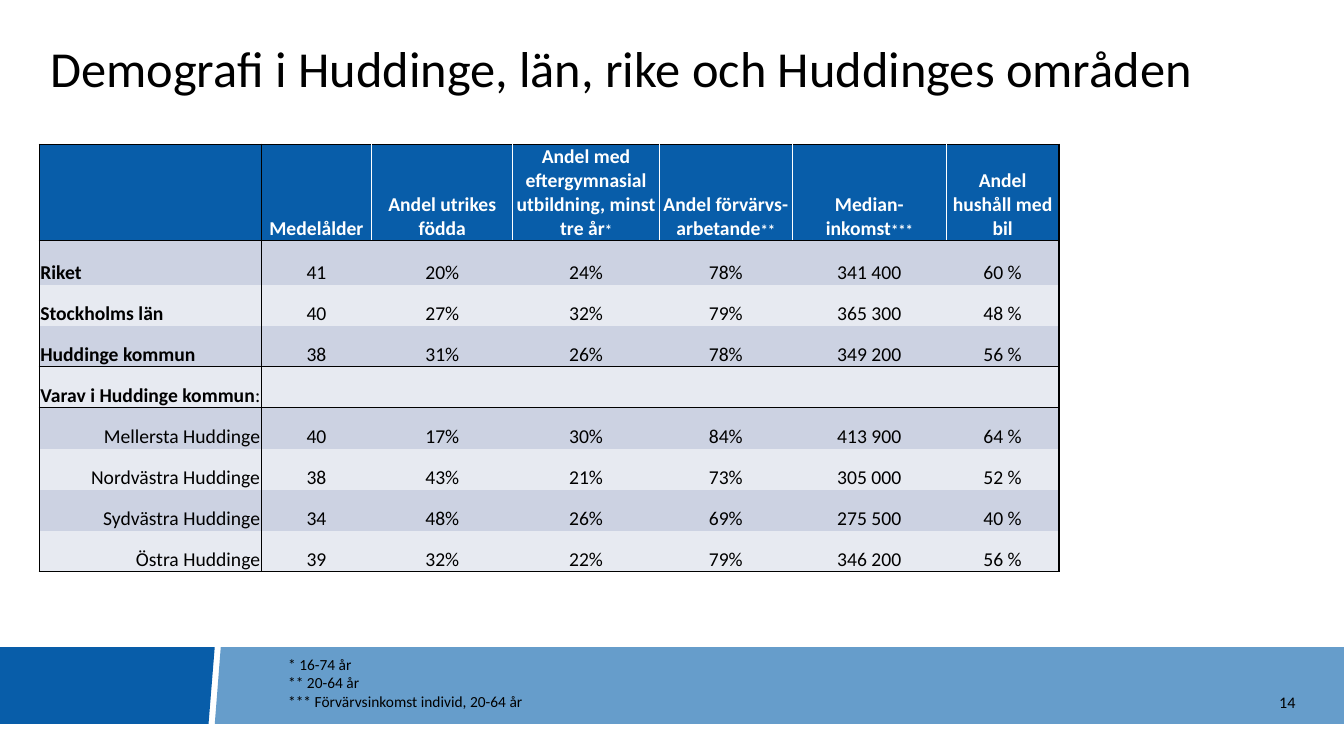
from lxml import etree
from pptx import Presentation
from pptx.dml.color import RGBColor
from pptx.enum.text import MSO_ANCHOR, PP_ALIGN
from pptx.oxml.ns import qn
from pptx.util import Pt

LEFT, CENTER, RIGHT = PP_ALIGN.LEFT, PP_ALIGN.CENTER, PP_ALIGN.RIGHT
TOP, MIDDLE, BOTTOM = MSO_ANCHOR.TOP, MSO_ANCHOR.MIDDLE, MSO_ANCHOR.BOTTOM

BLACK = RGBColor(0x00, 0x00, 0x00)
WHITE = RGBColor(0xFF, 0xFF, 0xFF)
DARK_BLUE = RGBColor(0x08, 0x5D, 0xA9)
LIGHT_BLUE = RGBColor(0x66, 0x9D, 0xCB)
BAND_DARK = RGBColor(0xCC, 0xD2, 0xE2)
BAND_LIGHT = RGBColor(0xE7, 0xEA, 0xF1)
FONT = "Calibri"

TITLE = "Demografi i Huddinge, län, rike och Huddinges områden"
# Each heading is its text and its footnote mark.
HEADINGS = [
    ("", ""),
    ("Medelålder", ""),
    ("Andel utrikes födda", ""),
    ("Andel med eftergymnasial utbildning, minst tre år", "*"),
    ("Andel förvärvs-arbetande", "**"),
    ("Median-inkomst", "***"),
    ("Andel hushåll med bil", ""),
]
ROWS = [
    ("Riket", "41", "20%", "24%", "78%", "341 400", "60 %"),
    ("Stockholms län", "40", "27%", "32%", "79%", "365 300", "48 %"),
    ("Huddinge kommun", "38", "31%", "26%", "78%", "349 200", "56 %"),
    ("Varav i Huddinge kommun", "", "", "", "", "", ""),
    ("Mellersta Huddinge", "40", "17%", "30%", "84%", "413 900", "64 %"),
    ("Nordvästra Huddinge", "38", "43%", "21%", "73%", "305 000", "52 %"),
    ("Sydvästra Huddinge", "34", "48%", "26%", "69%", "275 500", "40 %"),
    ("Östra Huddinge", "39", "32%", "22%", "79%", "346 200", "56 %"),
]
SUBHEADING_ROW = 4
FOOTNOTES = ["* 16-74 år", "** 20-64 år", "*** Förvärvsinkomst individ, 20-64 år"]
PAGE_NUMBER = "14"

COLUMN_WIDTHS = [158.5, 79, 100.8, 104.6, 95, 110, 80.5]
ROW_HEIGHTS = [68.2, 31.5] + [29.3] * 7
BLACK_RULES_ACROSS = {0, 1, 4, 5, 9}  # counted in row edges
BLACK_RULES_DOWN = {0, 1, 7}  # counted in column edges

BAND_TOP, BAND_BOTTOM = 462.2, 517
BANDS = [
    (LIGHT_BLUE, [(157.7, BAND_TOP), (960, BAND_TOP), (960, BAND_BOTTOM), (153.4, BAND_BOTTOM)]),
    (DARK_BLUE, [(0, BAND_TOP), (153.4, BAND_TOP), (149, BAND_BOTTOM), (0, BAND_BOTTOM)]),
]


def style(paragraph, size, color=BLACK, bold=False, alignment=LEFT):
    paragraph.alignment = alignment
    paragraph.font.name = FONT
    paragraph.font.size = Pt(size)
    paragraph.font.color.rgb = color
    paragraph.font.bold = bold


def add_band(slide, color, points):
    builder = slide.shapes.build_freeform(Pt(points[0][0]), Pt(points[0][1]))
    builder.add_line_segments([(Pt(x), Pt(y)) for x, y in points[1:]], close=True)
    band = builder.convert_to_shape()
    band.shadow.inherit = False
    band.fill.solid()
    band.fill.fore_color.rgb = color
    band.line.fill.background()


def add_text(slide, box, lines, size, alignment=LEFT, anchor=TOP):
    frame = slide.shapes.add_textbox(*[Pt(value) for value in box]).text_frame
    frame.word_wrap = True
    frame.vertical_anchor = anchor
    for index, line in enumerate(lines):
        paragraph = frame.add_paragraph() if index else frame.paragraphs[0]
        paragraph.text = line
        style(paragraph, size, alignment=alignment)


def set_borders(cell, row, column):
    def across(edge):
        return BLACK if edge in BLACK_RULES_ACROSS else None

    def down(edge):
        if edge in BLACK_RULES_DOWN:
            return BLACK
        return WHITE if row == 0 else None

    borders = [("a:lnL", down(column)), ("a:lnR", down(column + 1)),
               ("a:lnT", across(row)), ("a:lnB", across(row + 1))]
    properties = cell._tc.get_or_add_tcPr()
    for position, (tag, color) in enumerate(borders):
        line = etree.Element(qn(tag), w=str(Pt(1)))
        properties.insert(position, line)
        if color is None:
            etree.SubElement(line, qn("a:noFill"))
        else:
            fill = etree.SubElement(line, qn("a:solidFill"))
            etree.SubElement(fill, qn("a:srgbClr"), val=str(color))


def format_cell(cell, row, column):
    cell.margin_left = cell.margin_right = cell.margin_top = Pt(0.7)
    cell.margin_bottom = 0
    cell.vertical_anchor = BOTTOM
    cell.fill.solid()
    if row == 0:
        cell.fill.fore_color.rgb = DARK_BLUE
    else:
        cell.fill.fore_color.rgb = BAND_DARK if row % 2 else BAND_LIGHT
    set_borders(cell, row, column)


def fill_cell(cell, row, column):
    paragraph = cell.text_frame.paragraphs[0]
    if row == 0:
        text, mark = HEADINGS[column]
        paragraph.text = text
        style(paragraph, 14, WHITE, True, CENTER)
        if mark:
            run = paragraph.add_run()
            run.text = mark
            run.font.size = Pt(10.5)
        return
    paragraph.text = ROWS[row - 1][column]
    if column:
        style(paragraph, 14, alignment=CENTER)
        return
    style(paragraph, 14, bold=row <= SUBHEADING_ROW,
          alignment=LEFT if row < SUBHEADING_ROW else RIGHT)
    if row == SUBHEADING_ROW:
        colon = paragraph.add_run()
        colon.text = ":"
        colon.font.bold = False


def add_demography_table(slide):
    table = slide.shapes.add_table(
        len(ROW_HEIGHTS), len(COLUMN_WIDTHS), Pt(28.1), Pt(103),
        Pt(sum(COLUMN_WIDTHS)), Pt(sum(ROW_HEIGHTS))).table
    for column, width in zip(table.columns, COLUMN_WIDTHS):
        column.width = Pt(width)
    for row, height in enumerate(ROW_HEIGHTS):
        table.rows[row].height = Pt(height)
        for column in range(len(COLUMN_WIDTHS)):
            cell = table.cell(row, column)
            format_cell(cell, row, column)
            fill_cell(cell, row, column)


def main():
    presentation = Presentation()
    presentation.slide_width, presentation.slide_height = Pt(960), Pt(540)
    slide = presentation.slides.add_slide(presentation.slide_layouts[5])
    for color, points in BANDS:
        add_band(slide, color, points)

    title = slide.shapes.title
    title.left, title.top, title.width, title.height = Pt(28.8), Pt(28.1), Pt(891.4), Pt(57.6)
    title.text_frame.text = TITLE
    title.text_frame.vertical_anchor = TOP
    paragraph = title.text_frame.paragraphs[0]
    paragraph.line_spacing = 0.9
    style(paragraph, 36)

    add_demography_table(slide)
    add_text(slide, (817.9, 487.4, 114.5, 28.8), [PAGE_NUMBER], 11.5, RIGHT, MIDDLE)
    add_text(slide, (198.7, 464.4, 635, 47.5), FOOTNOTES, 11)
    presentation.save("out.pptx")


if __name__ == "__main__":
    main()
